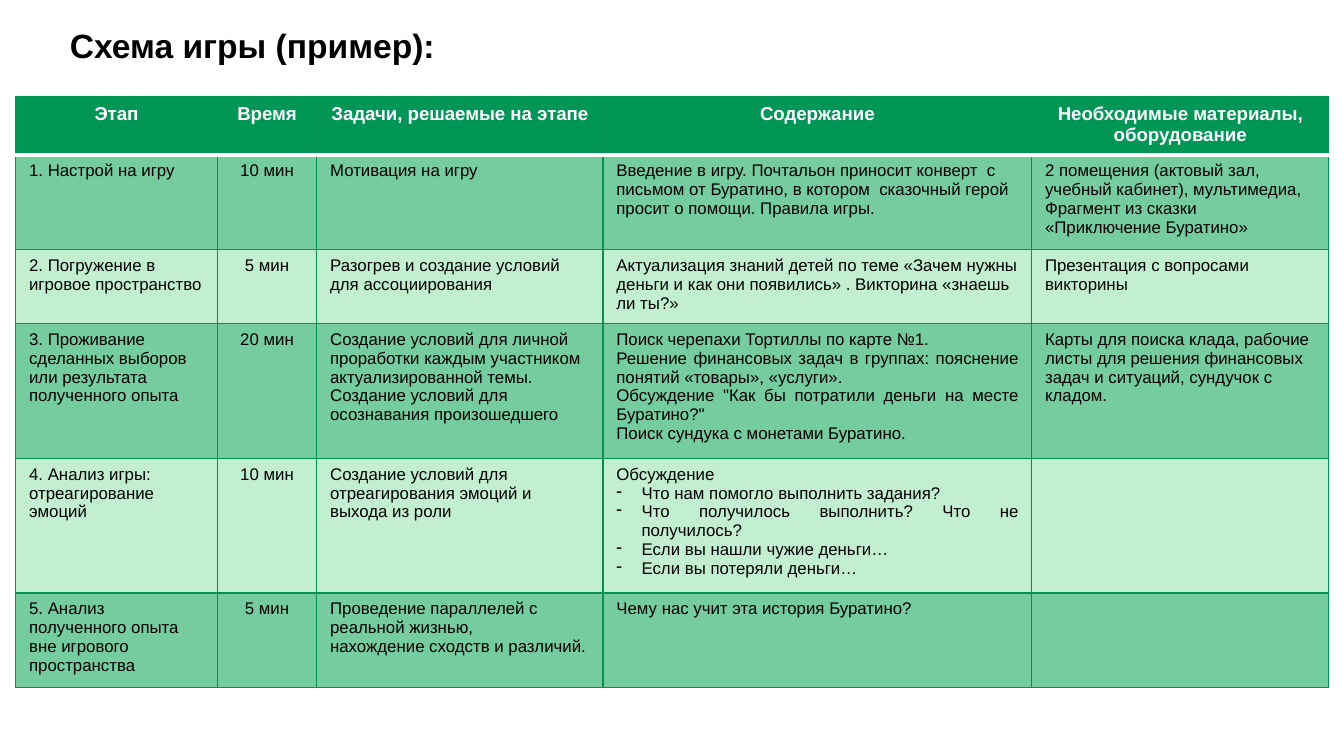
import pptx
import pptx.util
import pptx.dml.color
import pptx.enum.text
import pptx.oxml
import pptx.oxml.ns
import lxml.etree

Pt = pptx.util.Pt
RGB = pptx.dml.color.RGBColor
Align = pptx.enum.text.PP_ALIGN
Anchor = pptx.enum.text.MSO_ANCHOR

BLACK = RGB(0, 0, 0)
WHITE = RGB(255, 255, 255)
GREEN = RGB(0x00, 0x96, 0x55)
EDGE = RGB(0x00, 0x93, 0x53)
DARK = RGB(0x75, 0xCC, 0x9F)
LIGHT = RGB(0xC2, 0xEF, 0xCF)

WIDTHS = [108, 53.28, 153.36, 229.68, 159.12]
HEIGHTS = [30, 47.2, 37.5, 68, 67.5, 48.2]
TIME, PLAN = 1, 3

ROWS = [
    ["Этап", "Время", "Задачи, решаемые на этапе", "Содержание",
     "Необходимые материалы, оборудование"],
    ["1. Настрой на игру", "10 мин", "Мотивация на игру",
     "Введение в игру. Почтальон приносит конверт  с письмом от Буратино, "
     "в котором  сказочный герой просит о помощи. Правила игры.",
     "2 помещения (актовый зал, учебный кабинет), мультимедиа,\n"
     "Фрагмент из сказки «Приключение Буратино»"],
    ["2. Погружение в игровое пространство", "5 мин",
     "Разогрев и создание условий для ассоциирования",
     "Актуализация знаний детей по теме «Зачем нужны деньги и как они "
     "появились» . Викторина «знаешь ли ты?»",
     "Презентация с вопросами викторины"],
    ["3. Проживание сделанных выборов или результата полученного опыта",
     "20 мин",
     "Создание условий для личной проработки каждым участником "
     "актуализированной темы. Создание условий для осознавания произошедшего",
     "Поиск черепахи Тортиллы по карте №1.\n"
     "Решение финансовых задач в группах: пояснение понятий «товары», "
     "«услуги».\n"
     "Обсуждение \"Как бы потратили деньги на месте Буратино?\"\n"
     "Поиск сундука с монетами Буратино.",
     "Карты для поиска клада, рабочие листы для решения финансовых задач "
     "и ситуаций, сундучок с кладом."],
    ["4. Анализ игры: отреагирование эмоций", "10 мин",
     "Создание условий для отреагирования эмоций и выхода из роли",
     "Обсуждение\n"
     "- Что нам помогло выполнить задания?\n"
     "- Что получилось выполнить? Что не получилось?\n"
     "- Если вы нашли чужие деньги…\n"
     "- Если вы потеряли деньги…", ""],
    ["5. Анализ полученного опыта вне игрового пространства", "5 мин",
     "Проведение параллелей с реальной жизнью,\n"
     "нахождение сходств и различий.",
     "Чему нас учит эта история Буратино?", ""],
]


def add_dash(para):
    props = para._p.get_or_add_pPr()
    props.set("marL", str(Pt(13.5)))
    props.set("indent", str(-Pt(13.5)))
    dash = lxml.etree.SubElement(props, pptx.oxml.ns.qn("a:buChar"))
    dash.set("char", "-")


def write(frame, text, size=9, bold=False, color=BLACK, align=Align.LEFT):
    for num, line in enumerate(text.split("\n")):
        para = frame.add_paragraph() if num else frame.paragraphs[0]
        if line.startswith("- "):
            add_dash(para)
            line = line[2:]
        para.alignment = align
        para.font.size = Pt(size)
        if line:
            run = para.add_run()
            run.text = line
            run.font.name = "Arial"
            run.font.size = Pt(size)
            run.font.bold = bold
            run.font.color.rgb = color


def add_edge(cell, side, color=EDGE, width=0.75):
    line = pptx.oxml.parse_xml(
        f'<a:ln{side} {pptx.oxml.ns.nsdecls("a")} w="{Pt(width)}">'
        f'<a:solidFill><a:srgbClr val="{color}"/></a:solidFill>'
        f'</a:ln{side}>')
    cell._tc.get_or_add_tcPr().append(line)


def style(cell, row):
    for side in "LRTB":
        if (row, side) in ((0, "B"), (1, "T")):
            add_edge(cell, side, WHITE, 2)
        else:
            add_edge(cell, side)
    cell.fill.solid()
    cell.fill.fore_color.rgb = (
        GREEN if row == 0 else DARK if row % 2 else LIGHT)


def add_title(slide):
    box = slide.shapes.add_textbox(Pt(37.4), Pt(12.2), Pt(542), Pt(24.5))
    frame = box.text_frame
    frame.word_wrap = True
    frame.vertical_anchor = Anchor.MIDDLE
    frame.margin_left = frame.margin_right = 0
    frame.margin_top = frame.margin_bottom = 0
    write(frame, "Схема игры (пример):", size=18, bold=True)


def add_plan(slide):
    table = slide.shapes.add_table(
        len(ROWS), len(WIDTHS), Pt(8.4), Pt(51.8),
        Pt(sum(WIDTHS)), Pt(sum(HEIGHTS))).table
    for col, width in zip(table.columns, WIDTHS):
        col.width = Pt(width)
    for row, height in zip(table.rows, HEIGHTS):
        row.height = Pt(height)
    for row, texts in enumerate(ROWS):
        for col, text in enumerate(texts):
            cell = table.cell(row, col)
            style(cell, row)
            if row == 0:
                write(cell.text_frame, text, size=10, bold=True,
                      color=WHITE, align=Align.CENTER)
            elif col == TIME:
                write(cell.text_frame, text, align=Align.CENTER)
            elif col == PLAN and "\n" in text:
                write(cell.text_frame, text, align=Align.JUSTIFY)
            else:
                write(cell.text_frame, text)


def main():
    deck = pptx.Presentation()
    deck.slide_width, deck.slide_height = Pt(720), Pt(405)
    slide = deck.slides.add_slide(deck.slide_layouts[6])
    add_title(slide)
    add_plan(slide)
    deck.save("out.pptx")


if __name__ == "__main__":
    main()
